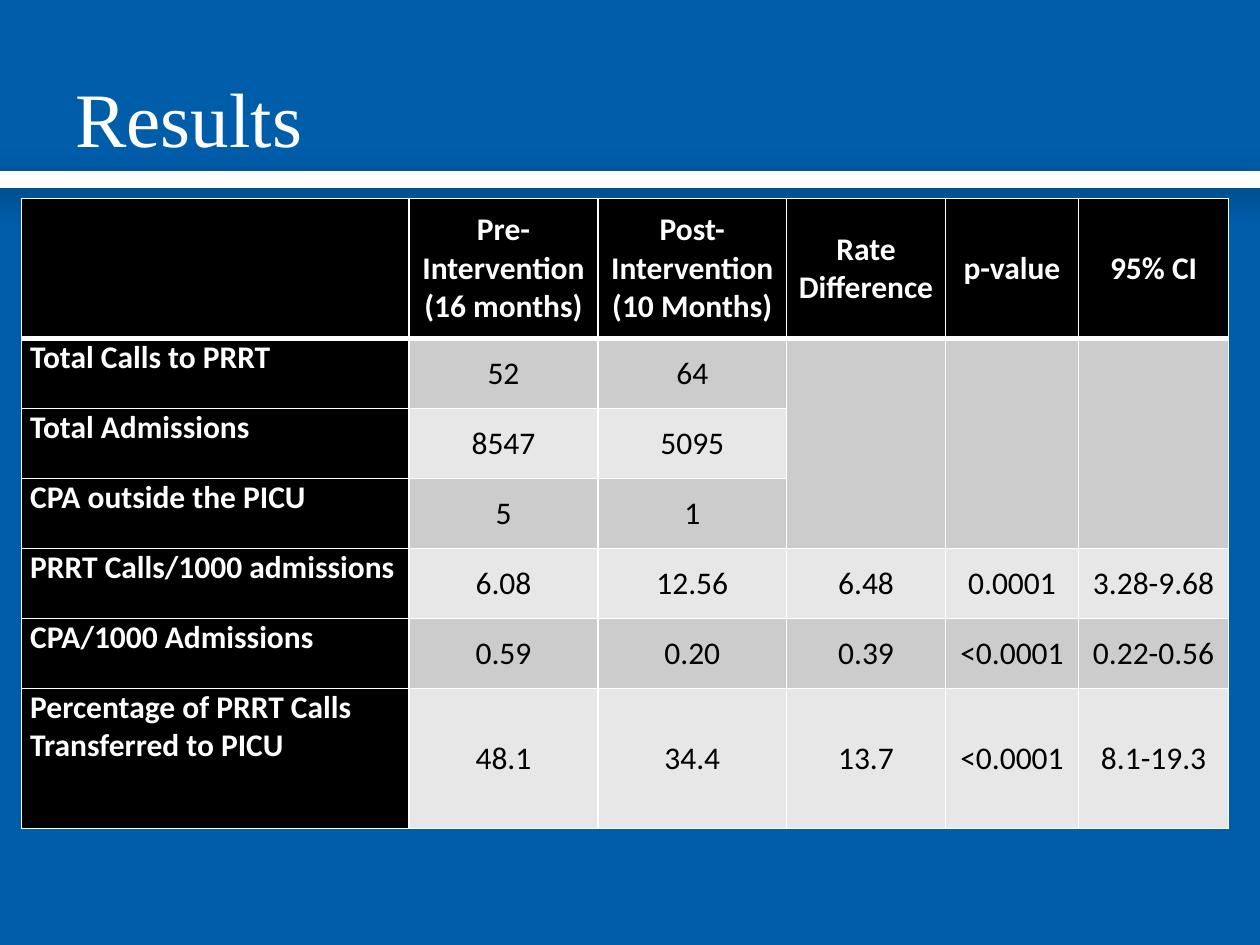
from collections import namedtuple

from lxml import etree
from pptx import Presentation
from pptx.dml.color import RGBColor
from pptx.enum.shapes import MSO_CONNECTOR
from pptx.enum.text import MSO_ANCHOR, PP_ALIGN
from pptx.oxml import parse_xml
from pptx.oxml.ns import nsdecls, qn
from pptx.util import Inches, Pt

STRAIGHT = MSO_CONNECTOR.STRAIGHT
TOP, MIDDLE = MSO_ANCHOR.TOP, MSO_ANCHOR.MIDDLE
LEFT, CENTER = PP_ALIGN.LEFT, PP_ALIGN.CENTER
WIDTH, HEIGHT = Inches(10), Inches(7.5)
TITLE_ONLY = 5
COLORS = {"page": "005DAA", "light": "FFFFFF", "dark": "000000",
          "odd": "CCCCCC", "even": "E7E7E7"}
Box = namedtuple("Box", "left top width height")

COLUMN_SHARES = [3.08, 1.5, 1.5, 1.26, 1.06, 1.19]
ROW_SHARES = [2, 1, 1, 1, 1, 1, 2]
BLANK_ROWS, BLANK_COLUMNS = (1, 3), (3, 4, 5)
RESULTS = [
    ["", "Pre-\nIntervention\n(16 months)", "Post-Intervention\n(10 Months)",
     "Rate Difference", "p-value", "95% CI"],
    ["Total Calls to PRRT", "52", "64", "", "", ""],
    ["Total Admissions", "8547", "5095", "", "", ""],
    ["CPA outside the PICU", "5", "1", "", "", ""],
    ["PRRT Calls/1000 admissions", "6.08", "12.56", "6.48", "0.0001", "3.28-9.68"],
    ["CPA/1000 Admissions", "0.59", "0.20", "0.39", "<0.0001", "0.22-0.56"],
    ["Percentage of PRRT Calls Transferred to PICU", "48.1", "34.4", "13.7",
     "<0.0001", "8.1-19.3"],
]


def color(name):
    """Return the named colour."""
    return RGBColor.from_string(COLORS[name])


def share_box(left, top, width, height):
    """Return a box given in inches-free shares of the slide."""
    return Box(*(int(share * side) for share, side in
                 zip((left, top, width, height), (WIDTH, HEIGHT) * 2)))


def set_values(target, values):
    """Set every attribute in a dict of format values."""
    for name, value in values.items():
        setattr(target, name, value)


def style_font(font, name, size, color_name, bold=False):
    """Format one font."""
    set_values(font, {"name": name, "size": Pt(size), "bold": bold})
    font.color.rgb = color(color_name)


def add_rule(page, box):
    """Draw the shadowed rule below the title."""
    rule = page.shapes.add_connector(
        STRAIGHT, box.left, box.top, box.left + box.width, box.top)
    rule.line.color.rgb = color("light")
    rule.line.width = Pt(10)
    rule._element.spPr.append(parse_xml(
        f'<a:effectLst {nsdecls("a")}><a:outerShdw blurRad="{Pt(17)}" '
        f'dist="{Pt(4)}" dir="5400000" rotWithShape="0">'
        f'<a:srgbClr val="{COLORS["dark"]}"><a:alpha val="25000"/></a:srgbClr>'
        '</a:outerShdw></a:effectLst>'))


def add_title(page, box):
    """Place and format the title placeholder."""
    title = page.shapes.title
    set_values(title, box._asdict())
    frame = title.text_frame
    set_values(frame, {"text": "Results", "vertical_anchor": MIDDLE, "word_wrap": True})
    para = frame.paragraphs[0]
    para.alignment = LEFT
    style_font(para.runs[0].font, "Times New Roman", 44, "light")


def add_borders(cell, widths):
    """Put white borders of the given point widths before the cell's fill."""
    props = cell._tc.get_or_add_tcPr()
    for position, (side, points) in enumerate(widths.items()):
        border = etree.Element(qn(f"a:ln{side}"), w=str(Pt(points)))
        fill = etree.SubElement(border, qn("a:solidFill"))
        etree.SubElement(fill, qn("a:srgbClr"), val=COLORS["light"])
        props.insert(position, border)


def fill_cell(cell, text, row, column):
    """Write and format one cell by its role in the table."""
    heading = row == 0 or column == 0
    label = column == 0 and row > 0
    set_values(cell, {
        "text": text, "vertical_anchor": TOP if label else MIDDLE,
        "margin_left": Inches(0.07), "margin_right": Inches(0.07),
        "margin_top": 0, "margin_bottom": 0})
    cell.fill.solid()
    cell.fill.fore_color.rgb = color(
        "dark" if heading else "odd" if row % 2 else "even")
    for para in cell.text_frame.paragraphs:
        para.alignment = LEFT if label else CENTER
        style_font(para.font, "Calibri", 18, "light" if heading else "dark", heading)
        for span in para.runs:
            style_font(span.font, "Calibri", 18, "light" if heading else "dark", heading)
    add_borders(cell, {"L": 1, "R": 1, "T": 3 if row == 1 else 1,
                       "B": 3 if row == 0 else 1})


def add_results(page, box):
    """Build the table of results."""
    table = page.shapes.add_table(len(ROW_SHARES), len(COLUMN_SHARES), *box).table
    for column, share in zip(table.columns, COLUMN_SHARES):
        column.width = int(box.width * share / sum(COLUMN_SHARES))
    for row, share in zip(table.rows, ROW_SHARES):
        row.height = int(box.height * share / sum(ROW_SHARES))
    for row, texts in enumerate(RESULTS):
        for column, text in enumerate(texts):
            fill_cell(table.cell(row, column), text, row, column)
    first, last = BLANK_ROWS
    for column in BLANK_COLUMNS:
        table.cell(first, column).merge(table.cell(last, column))


def main():
    """Build and save the deck."""
    deck = Presentation()
    set_values(deck, {"slide_width": WIDTH, "slide_height": HEIGHT})
    page = deck.slides.add_slide(deck.slide_layouts[TITLE_ONLY])
    page.background.fill.solid()
    page.background.fill.fore_color.rgb = color("page")
    add_rule(page, share_box(-0.033, 0.19, 1.066, 0))
    add_results(page, share_box(0.017, 0.21, 0.958, 0.667))
    add_title(page, share_box(0.05, 0.04, 0.9, 0.167))
    deck.save("out.pptx")


if __name__ == "__main__":
    main()
